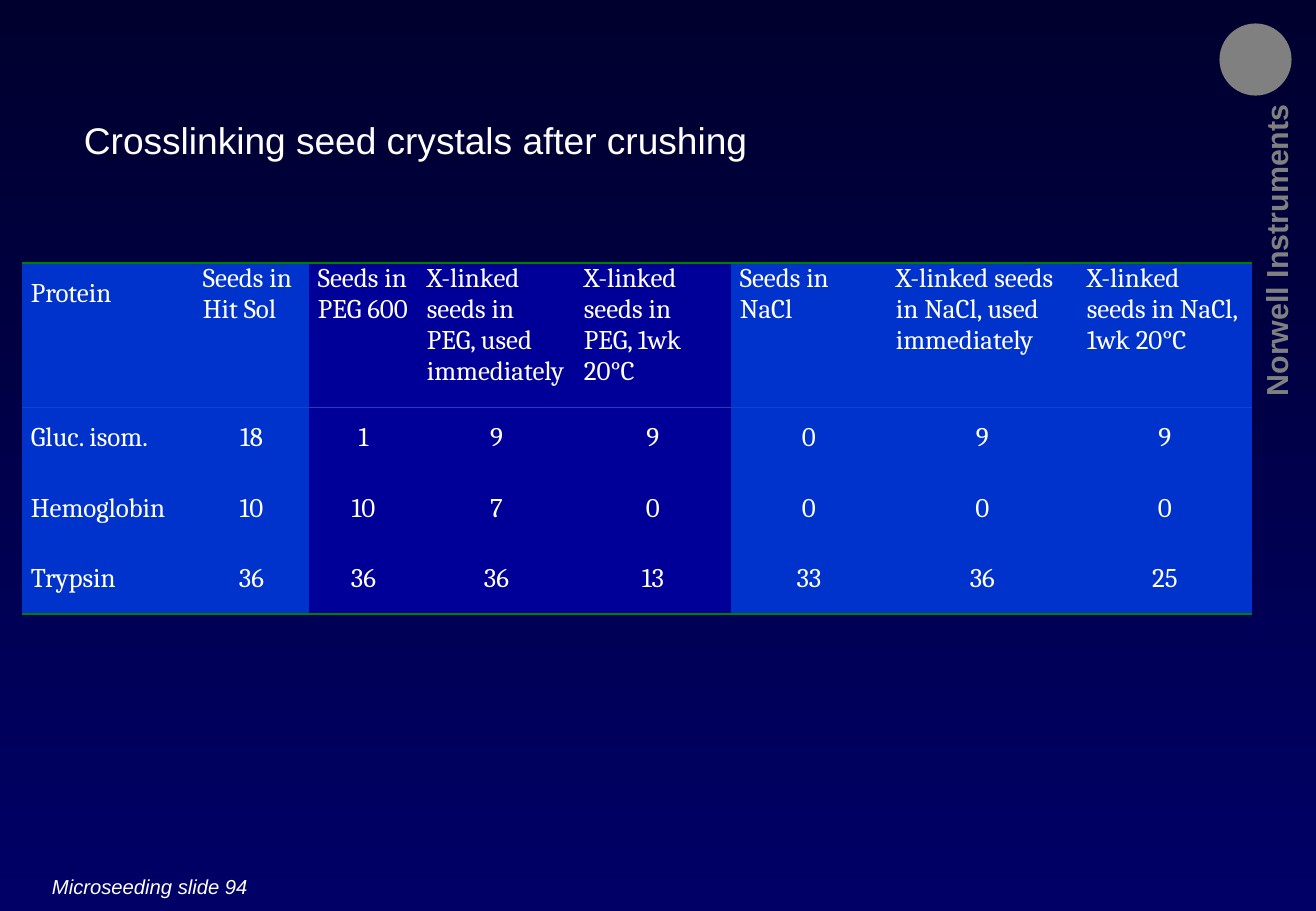
"""Build the slide on crosslinking seed crystals after crushing."""
import pptx
import pptx.dml.color
import pptx.enum.shapes
import pptx.enum.text
import pptx.oxml.ns
import pptx.util
import lxml.etree

RGB = pptx.dml.color.RGBColor
ALIGN = pptx.enum.text.PP_ALIGN
ANCHOR = pptx.enum.text.MSO_ANCHOR
WHITE = RGB(0xFF, 0xFF, 0xFF)
GREY = RGB(0x80, 0x80, 0x80)
GREEN = RGB(0x00, 0x80, 0x00)
LINE_BLUE = RGB(0x0F, 0x46, 0xC8)
LIGHT_BLUE = RGB(0x00, 0x33, 0xCC)
DARK_BLUE = RGB(0x00, 0x00, 0x99)
SKY = (RGB(0x00, 0x00, 0x2F), RGB(0x00, 0x00, 0x66))

SLIDE_SIZE = (1316, 911)
EMBLEM = (1222, 26, 67, 67)
TEXTS = [
    {"text": "Norwell Instruments", "at": (1094, 250, 364, 49), "inset": (12, 6),
     "rotation": 270, "align": ALIGN.RIGHT, "anchor": ANCHOR.MIDDLE, "wrap": True,
     "font": {"size": 18, "color": GREY, "bold": True}},
    {"text": "Microseeding slide 94", "at": (40, 868, 221, 36), "inset": (12, 6),
     "rotation": 0, "align": ALIGN.LEFT, "anchor": ANCHOR.TOP, "wrap": False,
     "font": {"size": 12, "color": WHITE, "italic": True}},
    {"text": "Crosslinking seed crystals after crushing", "at": (84, 117, 1232, 45),
     "inset": (0, 0), "rotation": 0, "align": ALIGN.LEFT, "anchor": ANCHOR.TOP,
     "wrap": True, "font": {"size": 22, "color": WHITE}},
]

TABLE_ORIGIN = (22, 263)
COLUMN_WIDTHS = [172, 115, 109, 157, 156, 156, 191, 174]
ROW_HEIGHTS = [144, 71, 70, 66]
PEG_COLUMNS = range(2, 5)
ROWS = [
    ("Protein", "Seeds in Hit Sol", "Seeds in PEG 600",
     "X-linked seeds in PEG, used immediately", "X-linked seeds in PEG, 1wk 20°C",
     "Seeds in NaCl", "X-linked seeds in NaCl, used immediately",
     "X-linked seeds in NaCl, 1wk 20°C"),
    ("Gluc. isom.", 18, 1, 9, 9, 0, 9, 9),
    ("Hemoglobin", 10, 10, 7, 0, 0, 0, 0),
    ("Trypsin", 36, 36, 36, 13, 33, 36, 25),
]
OUTER_RULE = (GREEN, 1.5)
HEADER_RULE = (LINE_BLUE, 0.5)
BORDERS = {
    (0, "T"): OUTER_RULE,
    (0, "B"): HEADER_RULE,
    (1, "T"): HEADER_RULE,
    (len(ROWS) - 1, "B"): OUTER_RULE,
}


def px(*lengths):
    """Turn pixels into EMU."""
    return [round(length * 914400 / 121.5) for length in lengths]


def set_all(target, values):
    """Set each named attribute on the target."""
    for name, value in values.items():
        setattr(target, name, value)


def add_span(para, text, size, color, face="Arial", **style):
    """Add a run of formatted text."""
    span = para.add_run()
    span.text = text
    set_all(span.font, {"size": pptx.util.Pt(size), "name": face, **style})
    span.font.color.rgb = color


def add_text(page, item):
    """Add one text box."""
    box = page.shapes.add_textbox(*px(*item["at"]))
    box.rotation = item["rotation"]
    side, end = px(*item["inset"])
    set_all(box.text_frame, {
        "word_wrap": item["wrap"], "vertical_anchor": item["anchor"],
        "margin_left": side, "margin_right": side,
        "margin_top": end, "margin_bottom": end})
    para = box.text_frame.paragraphs[0]
    para.alignment = item["align"]
    add_span(para, item["text"], **item["font"])


def add_border(cell, side, rule):
    """Draw one cell border, or clear it when there is no rule."""
    qn = pptx.oxml.ns.qn
    line = lxml.etree.SubElement(cell._tc.get_or_add_tcPr(), qn(f"a:ln{side}"))
    if rule is None:
        lxml.etree.SubElement(line, qn("a:noFill"))
        return
    color, width = rule
    line.set("w", str(int(pptx.util.Pt(width))))
    fill = lxml.etree.SubElement(line, qn("a:solidFill"))
    lxml.etree.SubElement(fill, qn("a:srgbClr"), val=str(color))


def fill_cell(cell, row, column, value):
    """Write and format one table cell."""
    side, = px(9)
    set_all(cell, {"margin_left": side, "margin_right": side,
                   "margin_top": 0, "margin_bottom": 0})
    for edge in "LRTB":
        add_border(cell, edge, BORDERS.get((row, edge)))
    cell.fill.solid()
    cell.fill.fore_color.rgb = DARK_BLUE if column in PEG_COLUMNS else LIGHT_BLUE
    para = cell.text_frame.paragraphs[0]
    set_all(para, {
        "alignment": ALIGN.CENTER if row and column else ALIGN.LEFT,
        "line_spacing": 1.0 if column and not row else 1.5,
        "space_after": pptx.util.Pt(10)})
    add_span(para, str(value), 16, WHITE, "Cambria")


def add_results(page):
    """Add the table of results."""
    size = (sum(COLUMN_WIDTHS), sum(ROW_HEIGHTS))
    table = page.shapes.add_table(
        len(ROWS), len(COLUMN_WIDTHS), *px(*TABLE_ORIGIN, *size)).table
    set_all(table, {"first_row": False, "horz_banding": False})
    for column, width in zip(table.columns, px(*COLUMN_WIDTHS)):
        column.width = width
    for row, height in zip(table.rows, px(*ROW_HEIGHTS)):
        row.height = height
    for row, values in enumerate(ROWS):
        for column, value in enumerate(values):
            fill_cell(table.cell(row, column), row, column, value)


def main():
    """Build and save the deck."""
    deck = pptx.Presentation()
    deck.slide_width, deck.slide_height = px(*SLIDE_SIZE)
    page = deck.slides.add_slide(deck.slide_layouts[6])
    backdrop = page.background.fill
    backdrop.gradient()
    backdrop.gradient_angle = 270
    for stop, color, position in zip(backdrop.gradient_stops, SKY, (0, 1)):
        stop.color.rgb = color
        stop.position = position

    emblem = page.shapes.add_shape(pptx.enum.shapes.MSO_SHAPE.OVAL, *px(*EMBLEM))
    emblem.shadow.inherit = False
    emblem.fill.solid()
    emblem.fill.fore_color.rgb = GREY
    emblem.line.color.rgb = GREY
    emblem.line.width = pptx.util.Pt(3)

    for item in TEXTS:
        add_text(page, item)
    add_results(page)
    deck.save("out.pptx")


if __name__ == "__main__":
    main()
